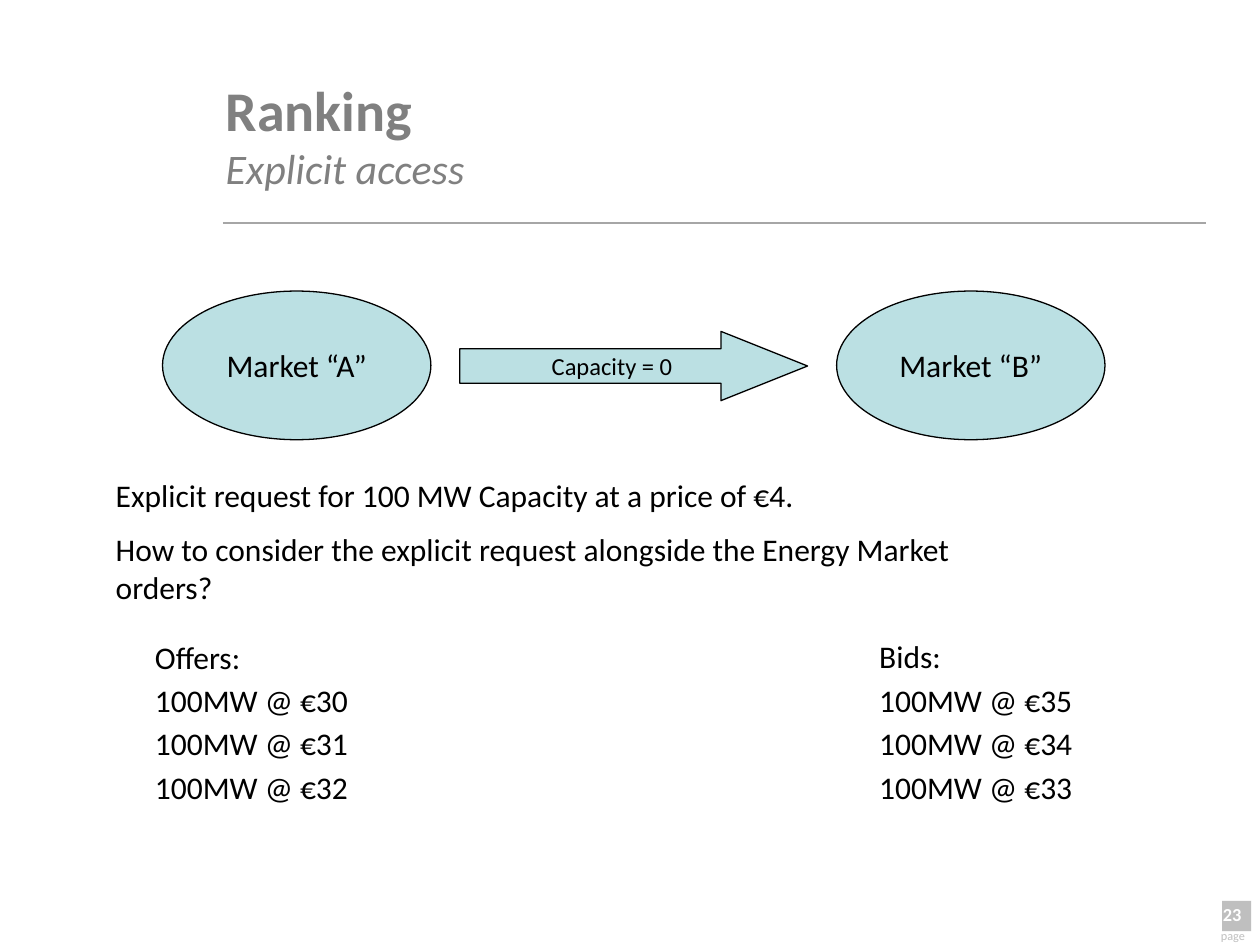
from lxml import etree
from pptx import Presentation
from pptx import util as u
from pptx.dml.color import RGBColor
from pptx.enum import shapes, text
from pptx.oxml import ns

HUES = {"ink": "000000", "head": "808080", "rule": "A6A6A6",
        "tag": "BFBFBF", "pool": "BBE0E3", "page": "FFFFFF"}
CELL = u.Inches(0.1)  # grid of 100 columns by 75 rows

deck = Presentation()
deck.slide_width, deck.slide_height = 100 * CELL, 75 * CELL
slide = deck.slides.add_slide(deck.slide_layouts[1])
items = slide.shapes


def grid(*cells):
    """Turn columns and rows into lengths."""
    return [round(c * CELL) for c in cells]


def write(para, words, size, hue="ink", bold=False, slant=False):
    run = para.add_run()
    run.text = words
    font = run.font
    font.name, font.size = "Calibri", u.Pt(size)
    font.bold, font.italic = bold, slant
    font.color.rgb = RGBColor.from_string(HUES[hue])


# Rule under the title
rule = items.add_connector(shapes.MSO_CONNECTOR.STRAIGHT, *grid(17.7, 17.7, 95.7, 17.7))
rule.line.color.rgb = RGBColor.from_string(HUES["rule"])
rule.line.width = u.Pt(0.75)
etree.SubElement(rule._element.spPr, ns.qn("a:effectLst"))

# Page number
tag = items.add_shape(shapes.MSO_SHAPE.RECTANGLE, *grid(97, 71.5, 2.3, 2.4))
tag.shadow.inherit = False
tag.fill.solid()
tag.fill.fore_color.rgb = RGBColor.from_string(HUES["tag"])
tag.line.fill.background()

count = items.add_textbox(*grid(95, 71.2, 4.5, 2.7)).text_frame
count.word_wrap = False
count.paragraphs[0].alignment = text.PP_ALIGN.RIGHT
write(count.paragraphs[0], "23", 10.5, "page", bold=True)

label = items.add_textbox(*grid(96.9, 74, 2.5, 0.5)).text_frame
label.word_wrap = True
label.vertical_anchor = text.MSO_ANCHOR.MIDDLE
label.margin_left = label.margin_right = label.margin_top = label.margin_bottom = 0
write(label.paragraphs[0], "page", 7, "tag")

# Title
title = items.title
title.left, title.top, title.width, title.height = grid(16.9, 4.4, 80.3, 12.5)
title.text_frame.auto_size = text.MSO_AUTO_SIZE.NONE
title.text_frame.vertical_anchor = text.MSO_ANCHOR.MIDDLE
para = title.text_frame.paragraphs[0]
para.alignment = text.PP_ALIGN.LEFT
write(para, "Ranking", 32, "head", bold=True)
para.add_line_break()
write(para, "Explicit access", 24, "head", slant=True)

# Markets and the link between them
kinds = shapes.MSO_SHAPE
for kind, cells, words, size in (
        (kinds.OVAL, (12.9, 23.1, 21.3, 11.8), "Market “A”", 18),
        (kinds.OVAL, (66.4, 23.1, 21.3, 11.8), "Market “B”", 18),
        (kinds.RIGHT_ARROW, (36.5, 26.3, 27.6, 5.5), "Capacity = 0", 14)):
    node = items.add_shape(kind, *grid(*cells))
    node.shadow.inherit = False
    node.fill.solid()
    node.fill.fore_color.rgb = RGBColor.from_string(HUES["pool"])
    node.line.color.rgb = RGBColor.from_string(HUES["ink"])
    node.line.width = u.Pt(0.75)
    if kind == kinds.RIGHT_ARROW:
        node.adjustments[1] = 1.25
    node.text_frame.word_wrap = False
    node.text_frame.vertical_anchor = text.MSO_ANCHOR.MIDDLE
    para = node.text_frame.paragraphs[0]
    para.alignment = text.PP_ALIGN.CENTER
    write(para, words, size)

# Question, offers and bids
offers = items.placeholders[1]
offers.left, offers.top, offers.width, offers.height = grid(11.3, 50.1, 26.9, 20)
bids = items.add_textbox(*grid(68.8, 50.1, 27.7, 22))
ask = items.add_textbox(*grid(8.2, 37.3, 68.5, 11.5))
for box, gap, hang, lines in (
        (offers, 3.2, 0.38, ["Offers:"] + [f"100MW @ €{p}" for p in (30, 31, 32)]),
        (bids, 3.2, 0.38, ["Bids:"] + [f"100MW @ €{p}" for p in (35, 34, 33)]),
        (ask, 9, 0, ["Explicit request for 100 MW Capacity at a price of €4.",
                     "How to consider the explicit request alongside the "
                     "Energy Market orders?"])):
    frame = box.text_frame
    frame.word_wrap = True
    frame.auto_size = text.MSO_AUTO_SIZE.NONE
    for row, words in enumerate(lines):
        para = frame.add_paragraph() if row else frame.paragraphs[0]
        props = para._p.get_or_add_pPr()
        props.set("marL", str(u.Inches(hang)))
        props.set("indent", str(-u.Inches(hang)))
        etree.SubElement(props, ns.qn("a:buNone"))
        para.space_before = u.Pt(gap if row else 0)
        write(para, words, 18)

deck.save("out.pptx")
